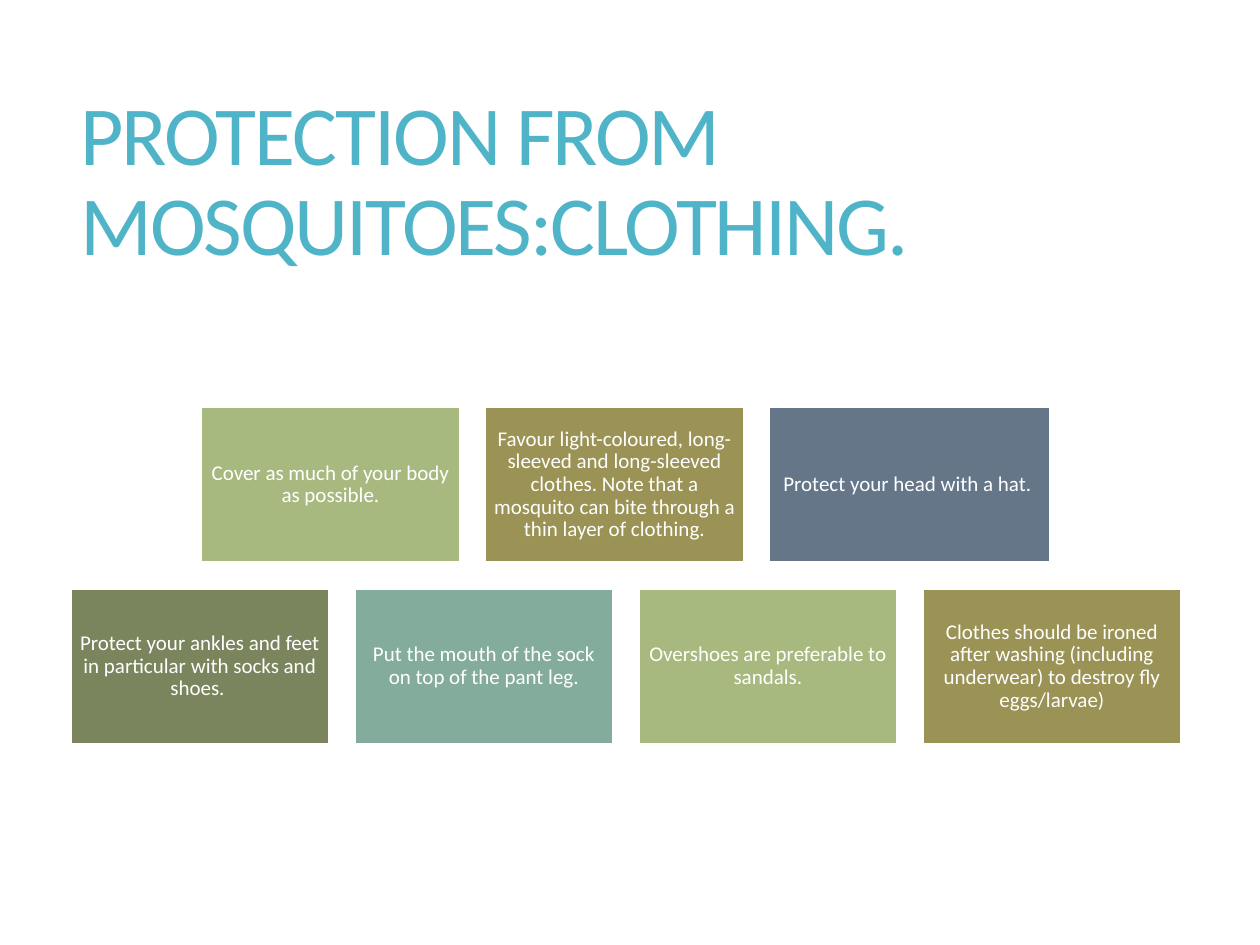
from pptx import Presentation
from pptx.dml.color import RGBColor
from pptx.enum import shapes, text
from pptx.util import Pt

WHITE = RGBColor(0xFF, 0xFF, 0xFF)
TITLE_BLUE = RGBColor(0x50, 0xB4, 0xC8)
LIGHT_GREEN = RGBColor(0xA8, 0xB9, 0x7F)
OLIVE = RGBColor(0x9B, 0x92, 0x56)
SLATE = RGBColor(0x65, 0x76, 0x89)
DARK_GREEN = RGBColor(0x7A, 0x85, 0x5D)
TEAL = RGBColor(0x84, 0xAC, 0x9D)

CARD_WIDTH, CARD_HEIGHT = 147.6, 88.4
WIDE_CARD = 160.6
COLUMN_GAP, ROW_GAP = 14.7, 15.3

ROWS = [
    [
        ("Cover as much of your body as possible.", LIGHT_GREEN, CARD_WIDTH),
        ("Favour light-coloured, long-sleeved and long-sleeved clothes. "
         "Note that a mosquito can bite through a thin layer of clothing.", OLIVE, CARD_WIDTH),
        ("Protect your head with a hat. ", SLATE, WIDE_CARD),
    ],
    [
        ("Protect your ankles and feet in particular with socks and shoes. ", DARK_GREEN, CARD_WIDTH),
        ("Put the mouth of the sock on top of the pant leg.", TEAL, CARD_WIDTH),
        ("Overshoes are preferable to sandals.", LIGHT_GREEN, CARD_WIDTH),
        ("Clothes should be ironed after washing (including underwear) "
         "to destroy fly eggs/larvae)", OLIVE, CARD_WIDTH),
    ],
]


def apply_format(target, values):
    for name, value in values.items():
        setattr(target, name, value)


def write_text(shape, wording, alignment, size, color):
    frame = shape.text_frame
    apply_format(frame, {"text": wording, "word_wrap": True,
                         "auto_size": text.MSO_AUTO_SIZE.NONE,
                         "vertical_anchor": text.MSO_ANCHOR.MIDDLE})
    paragraph = frame.paragraphs[0]
    apply_format(paragraph, {"alignment": alignment, "line_spacing": 0.9})
    run = paragraph.runs[0]
    apply_format(run.font, {"name": "Calibri", "size": Pt(size)})
    run.font.color.rgb = color
    return run


def place_title(slide, left, top, width, height):
    title = slide.shapes.title
    apply_format(title, {"left": Pt(left), "top": Pt(top),
                         "width": Pt(width), "height": Pt(height)})
    run = write_text(title, "PROTECTION FROM MOSQUITOES:CLOTHING.",
                     text.PP_ALIGN.LEFT, 48, TITLE_BLUE)
    run.font._element.set("spc", "-120")


def place_card(slide, left, top, width, height, wording, color):
    card = slide.shapes.add_shape(shapes.MSO_SHAPE.RECTANGLE,
                                  Pt(left), Pt(top), Pt(width), Pt(height))
    card.shadow.inherit = False
    card.fill.solid()
    card.fill.fore_color.rgb = color
    card.line.color.rgb = WHITE
    card.line.width = Pt(1)
    margins = ("margin_left", "margin_top", "margin_right", "margin_bottom")
    apply_format(card.text_frame, dict.fromkeys(margins, Pt(3.6)))
    write_text(card, wording, text.PP_ALIGN.CENTER, 12, WHITE)


def place_cards(slide, left, top, width):
    for index, row in enumerate(ROWS):
        row_width = sum(card[2] for card in row) + COLUMN_GAP * (len(row) - 1)
        card_left = left + (width - row_width) / 2
        card_top = top + index * (CARD_HEIGHT + ROW_GAP)
        for wording, color, card_width in row:
            place_card(slide, card_left, card_top, card_width, CARD_HEIGHT, wording, color)
            card_left += card_width + COLUMN_GAP


def main():
    presentation = Presentation()
    presentation.slide_width, presentation.slide_height = Pt(720), Pt(540)
    slide = presentation.slides.add_slide(presentation.slide_layouts[5])
    place_title(slide, 38.9, 39.6, 636.5, 130.3)
    place_cards(slide, 40.4, 232.8, 634.5)
    presentation.save("out.pptx")


if __name__ == "__main__":
    main()
